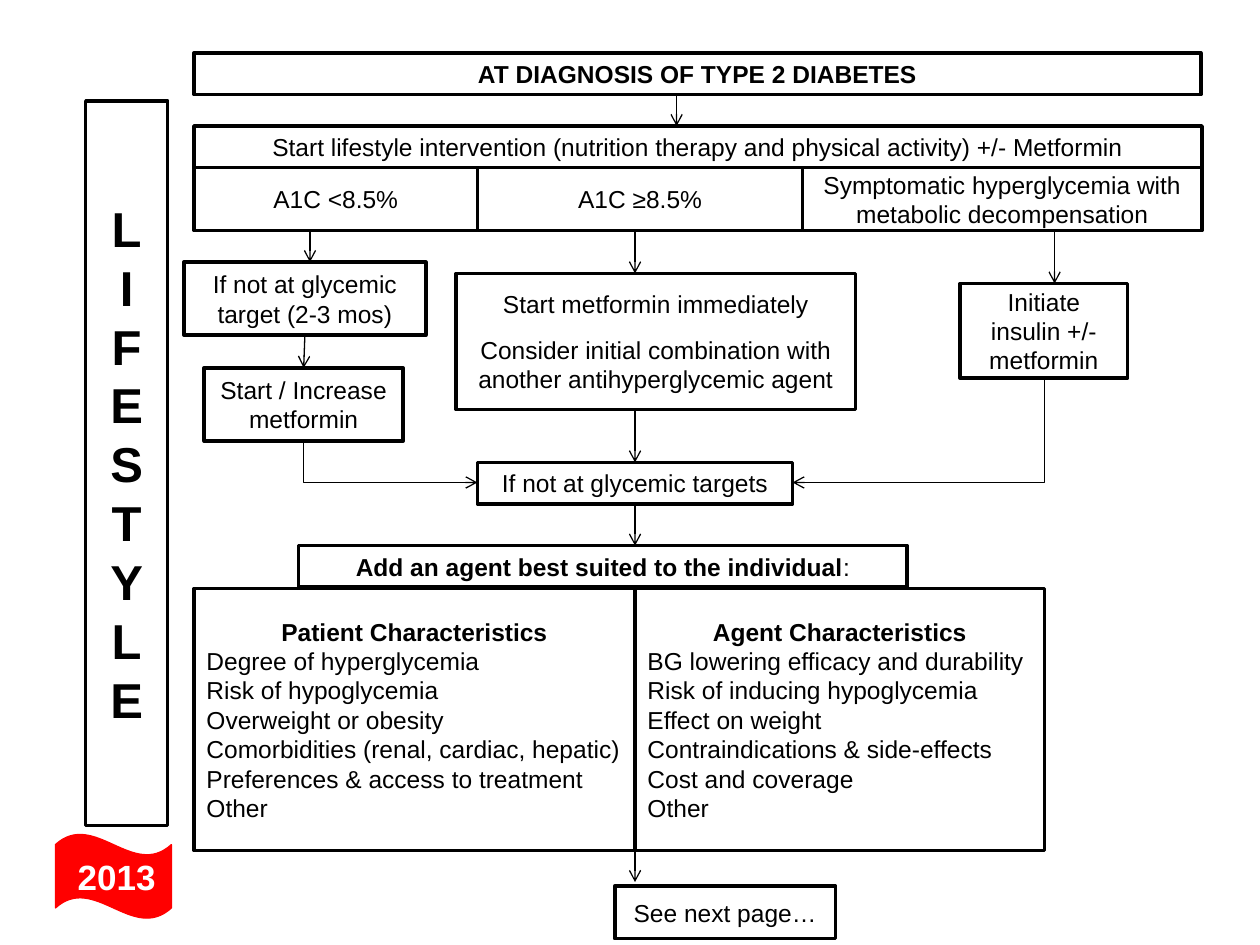
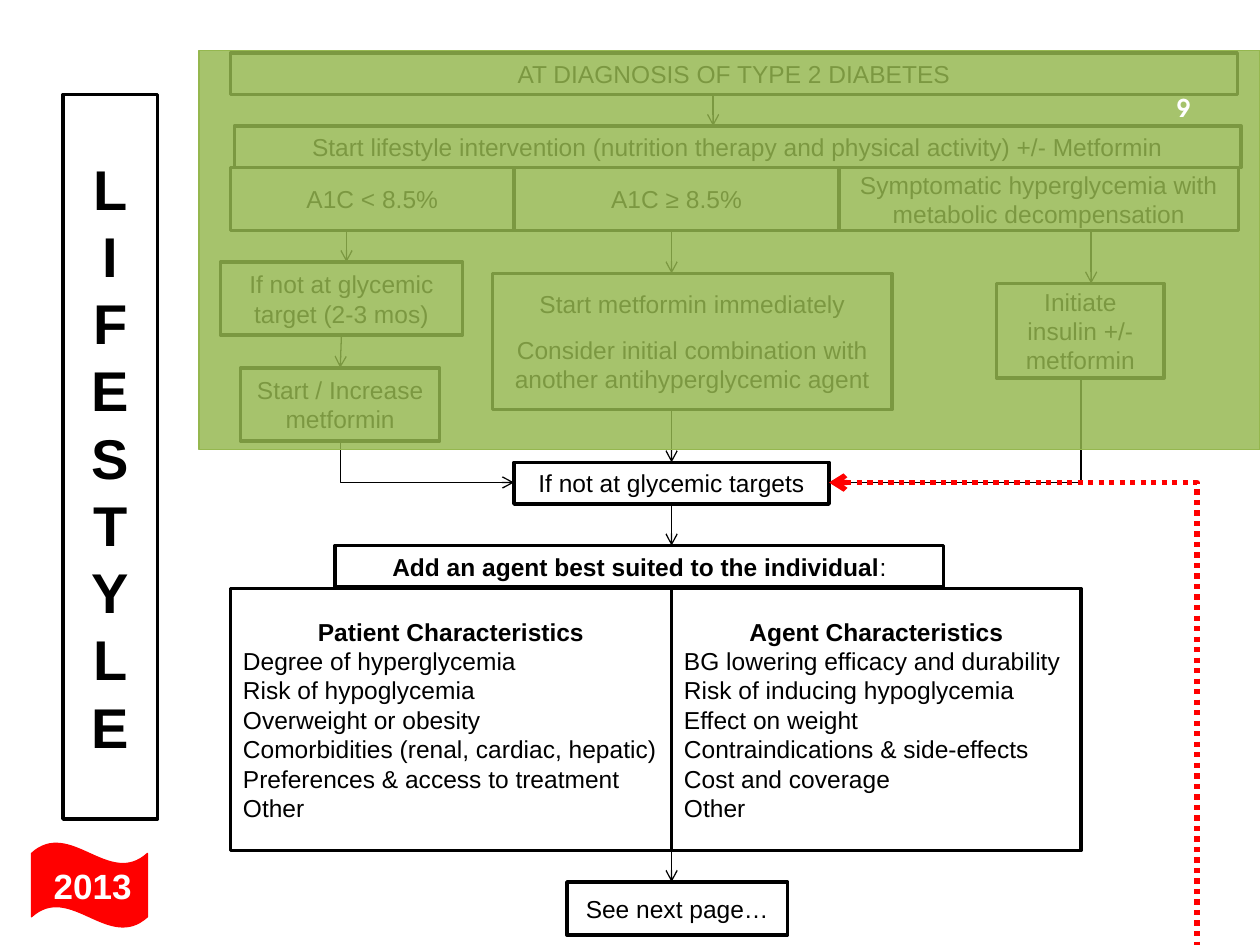
import pptx
import pptx.util
import pptx.dml.color
import pptx.enum.dml
import pptx.enum.shapes
import pptx.enum.text
import pptx.oxml
import pptx.oxml.ns
from pptx.util import Inches

BLACK = pptx.dml.color.RGBColor(0x00, 0x00, 0x00)
WHITE = pptx.dml.color.RGBColor(0xFF, 0xFF, 0xFF)
RED = pptx.dml.color.RGBColor(0xFF, 0x00, 0x00)
GREEN = pptx.dml.color.RGBColor(0x95, 0xB7, 0x4F)
SHAPE = pptx.enum.shapes.MSO_SHAPE
CONNECTOR = pptx.enum.shapes.MSO_CONNECTOR
ALIGN = pptx.enum.text.PP_ALIGN
ANCHOR = pptx.enum.text.MSO_ANCHOR
BODY_FONT, NUMBER_FONT = "Arial", "TeX Gyre Adventor"

# Flowchart boxes: name -> ((left, top, width, height), paragraphs)
BOXES = {
    "metformin now": ((3.62, 2.17, 3.17, 1.08), [
        "Start metformin immediately",
        "Consider initial combination with another antihyperglycemic agent"]),
    "intervention": ((1.54, 1, 8, 0.33), [
        "Start lifestyle intervention (nutrition therapy and physical activity) +/- Metformin"]),
    "low A1C": ((1.54, 1.33, 2.25, 0.5), ["A1C <8.5%"]),
    "symptomatic": ((6.37, 1.33, 3.17, 0.5), [
        "Symptomatic hyperglycemia with metabolic decompensation"]),
    "high A1C": ((3.79, 1.33, 2.58, 0.5), ["A1C ≥8.5%"]),
    "insulin": ((7.62, 2.25, 1.33, 0.75), ["Initiate insulin +/-", "metformin"]),
    "recheck": ((1.46, 2.08, 1.92, 0.58), ["If not at glycemic target (2-3 mos)"]),
    "increase": ((1.62, 2.92, 1.58, 0.58), ["Start / Increase metformin"]),
    "targets": ((3.79, 3.67, 2.5, 0.33), ["If not at glycemic targets"]),
    "add agent": ((2.37, 4.33, 4.83, 0.33), ["Add an agent best suited to the individual"]),
    "patient": ((1.54, 4.67, 3.5, 2.08), [
        "Patient Characteristics", "Degree of hyperglycemia", "Risk of hypoglycemia",
        "Overweight or obesity", "Comorbidities (renal, cardiac, hepatic)",
        "Preferences & access to treatment", "Other"]),
    "agent": ((5.04, 4.67, 3.25, 2.08), [
        "Agent Characteristics", "BG lowering efficacy and durability",
        "Risk of inducing hypoglycemia", "Effect on weight",
        "Contraindications & side-effects", "Cost and coverage", "Other"]),
    "diagnosis": ((1.54, 0.42, 7.99, 0.33), ["AT DIAGNOSIS OF TYPE 2 DIABETES"]),
}
LISTS = ("patient", "agent")

# Vertical arrows: x, top, bottom, box left at its bottom, box entered at its top
ARROWS = [
    (5.37, 0.75, 1, None, None),
    (2.46, 1.83, 2.08, None, None),
    (5.04, 1.83, 2.17, None, None),
    (8.37, 1.83, 2.25, None, None),
    (2.41, 2.66, 2.92, "recheck", "increase"),
    (5.04, 3.25, 3.67, None, "targets"),
    (5.04, 4, 4.33, "targets", None),
    (5.04, 6.75, 7, None, None),
]
# Elbow arrows: (tip x, tip y), (start x, start y)
ELBOWS = [((6.29, 3.83), (8.29, 3)), ((3.79, 3.83), (2.41, 3.5))]

PAGES = [
    {"shift": 0, "banner": (0.68, 0.8, 0.65, 5.75), "banner size": 28,
     "next": (4.88, 7.03, 1.75, 0.42), "flag": (0.44, 6.62, 0.92, 0.67),
     "bold": {"diagnosis"}, "text": {}, "place": {}},
    {"shift": 0.29, "banner": (0.5, 0.75, 0.75, 5.75), "banner size": 32,
     "next": (4.5, 7, 1.75, 0.42), "flag": (0.25, 6.69, 0.92, 0.67),
     "bold": set(), "text": {"low A1C": ["A1C < 8.5%"], "high A1C": ["A1C ≥ 8.5%"]},
     "place": {"intervention": (1.86, 1, 7.99, 0.33)},
     "number": "9", "cover": (1.58, 0.4, 8.42, 3.17),
     "return": ((6.58, 3.83), (9.5, 7.5))},
]


def write(frame, paragraphs, size=14, bold=False, color=BLACK, font=BODY_FONT):
    """Fill a text frame with centred paragraphs."""
    for index, text in enumerate(paragraphs):
        para = frame.paragraphs[0] if index == 0 else frame.add_paragraph()
        para.add_run().text = text
        para.alignment = ALIGN.CENTER
        para.font.size = pptx.util.Pt(size)
        para.font.bold = bold
        para.font.name = font
        para.font.color.rgb = color


def add_shape(page, kind, place, fill, line, width):
    shape = page.shapes.add_shape(kind, *map(Inches, place))
    shape.shadow.inherit = False
    shape.fill.solid()
    shape.fill.fore_color.rgb = fill
    shape.line.color.rgb = line
    shape.line.width = pptx.util.Pt(width)
    return shape


def add_box(page, place, paragraphs, **style):
    box = add_shape(page, SHAPE.FLOWCHART_PROCESS, place, WHITE, BLACK, 2)
    box.text_frame.word_wrap = True
    box.text_frame.vertical_anchor = ANCHOR.MIDDLE
    write(box.text_frame, paragraphs, **style)
    return box


def add_line(page, kind, start, end, arrow_end, color=BLACK, width=0.75):
    line = page.shapes.add_connector(kind, *map(Inches, start + end))
    line.line.color.rgb = color
    line.line.width = pptx.util.Pt(width)
    arrow = pptx.oxml.ns.qn("a:" + arrow_end)
    line.line._get_or_add_ln().makeelement(arrow, {})
    head = pptx.oxml.parse_xml(
        f'<a:{arrow_end} {pptx.oxml.ns.nsdecls("a")} type="arrow"/>')
    line.line._get_or_add_ln().append(head)
    properties = line._element.spPr
    properties.append(properties.makeelement(pptx.oxml.ns.qn("a:effectLst"), {}))
    return line


def add_elbow(page, tip, start, **style):
    """One bend: level at the tip, upright at the start."""
    elbow = add_line(page, CONNECTOR.ELBOW, tip, start, "headEnd", **style)
    geometry = elbow._element.spPr.find(pptx.oxml.ns.qn("a:prstGeom"))
    geometry.set("prst", "bentConnector2")
    return elbow


def moved(point, shift):
    return (point[0] + shift,) + tuple(point[1:])


def build_page(deck, plan):
    page = deck.slides.add_slide(deck.slide_layouts[6])
    shift = plan["shift"]

    # Boxes
    boxes = {}
    for name, (place, paragraphs) in BOXES.items():
        place = plan["place"].get(name, moved(place, shift))
        paragraphs = plan["text"].get(name, paragraphs)
        boxes[name] = add_box(page, place, paragraphs, bold=name in plan["bold"])
    for name in LISTS:
        heading, *items = boxes[name].text_frame.paragraphs
        heading.font.bold = True
        for item in items:
            item.alignment = ALIGN.LEFT
    boxes["metformin now"].text_frame.paragraphs[1].space_before = pptx.util.Pt(9)
    lead = boxes["add agent"].text_frame.paragraphs[0]
    lead.runs[0].font.bold = True
    lead.add_run().text = ":"
    add_box(page, plan["next"], ["See next page…"])
    add_box(page, plan["banner"], list("LIFESTYLE"), size=plan["banner size"], bold=True)

    # Arrows
    for x, top, bottom, source, target in ARROWS:
        arrow = add_line(page, CONNECTOR.STRAIGHT, (x + shift, top), (x + shift, bottom),
                         "tailEnd")
        if source:
            arrow.begin_connect(boxes[source], 2)
        if target:
            arrow.end_connect(boxes[target], 0)
    for tip, start in ELBOWS:
        add_elbow(page, moved(tip, shift), moved(start, shift))
    if "return" in plan:
        loop = add_elbow(page, *plan["return"], color=RED, width=3)
        loop.line.dash_style = pptx.enum.dml.MSO_LINE.ROUND_DOT
        loop.line._get_or_add_ln().find(pptx.oxml.ns.qn("a:prstDash")).set("val", "sysDot")

    # Translucent cover over the finished steps
    if "cover" in plan:
        cover = add_shape(page, SHAPE.RECTANGLE, plan["cover"], GREEN, GREEN, 0.75)
        tint = cover._element.spPr.find(
            pptx.oxml.ns.qn("a:solidFill")).find(pptx.oxml.ns.qn("a:srgbClr"))
        tint.append(tint.makeelement(pptx.oxml.ns.qn("a:alpha"), {"val": "83000"}))

    # Year flag
    flag = add_shape(page, SHAPE.WAVE, plan["flag"], RED, RED, 0.75)
    flag.adjustments[0] = 0.125
    frame = flag.text_frame
    frame.word_wrap = False
    frame.vertical_anchor = ANCHOR.TOP
    frame.margin_left = Inches(0.05)
    frame.margin_top = frame.margin_right = frame.margin_bottom = 0
    write(frame, ["2013"], size=20, bold=True, color=WHITE)

    # Page number
    if "number" in plan:
        number = page.shapes.add_textbox(*map(Inches, (9.12, 0.66, 0.55, 0.39)))
        number.text_frame.word_wrap = True
        number.text_frame.vertical_anchor = ANCHOR.MIDDLE
        write(number.text_frame, [plan["number"]], bold=True, color=WHITE, font=NUMBER_FONT)


def main():
    deck = pptx.Presentation()
    deck.slide_width, deck.slide_height = Inches(10), Inches(7.5)
    for plan in PAGES:
        build_page(deck, plan)
    deck.save("out.pptx")


if __name__ == "__main__":
    main()
